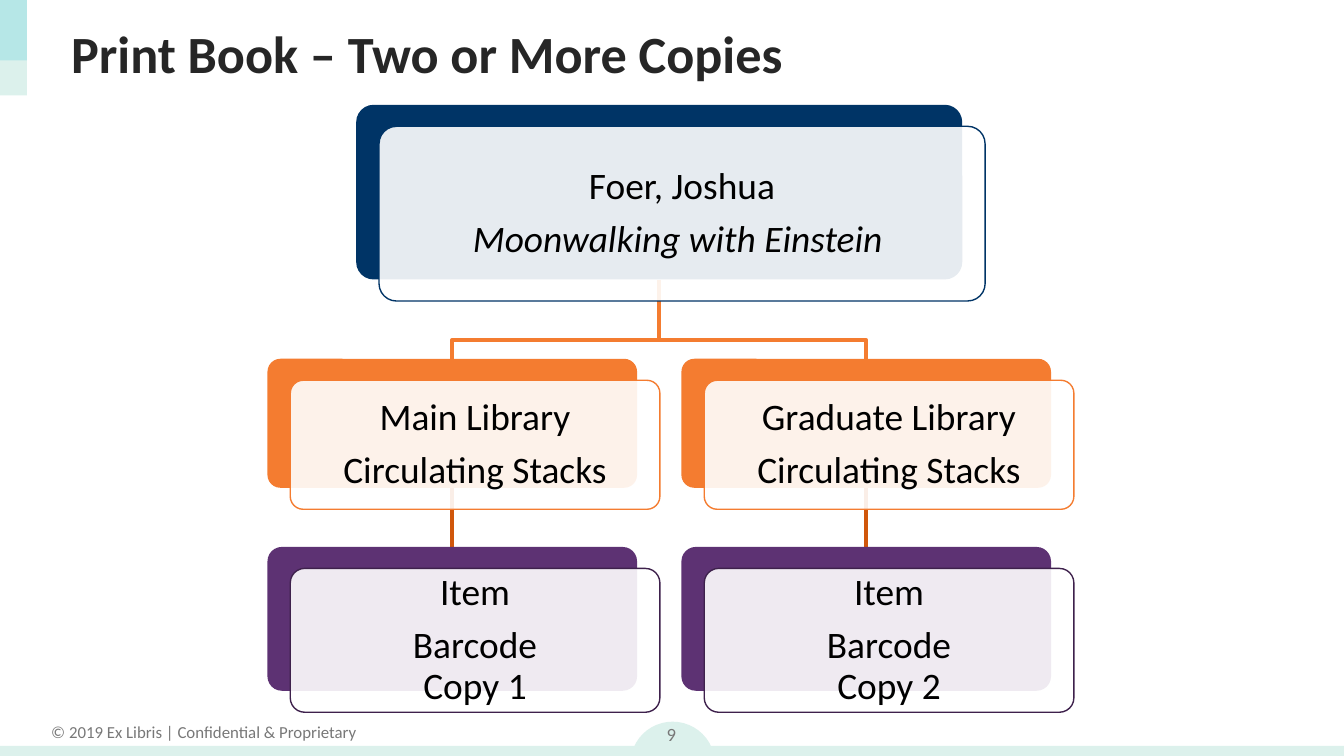
from dataclasses import dataclass

from lxml import etree
from pptx import Presentation
from pptx.dml.color import RGBColor
from pptx.enum import shapes as kinds, text as txt
from pptx.oxml import ns
from pptx.util import Inches, Pt


@dataclass(frozen=True)
class Theme:
    font: str = "Calibri"
    mint: str = "DCF1EC"
    aqua: str = "50CFDA"
    title: str = "262626"
    muted: str = "787878"
    ink: str = "000000"
    white: str = "FFFFFF"
    navy: str = "003466"
    orange: str = "F47C30"
    rust: str = "D0570B"
    purple: str = "5D3273"
    plum: str = "3E214C"
    title_size: int = 28
    card_size: int = 20
    number_size: int = 10
    footer_size: int = 9


THEME = Theme()
SLIDE_WIDTH = 10
SLIDE_HEIGHT = SLIDE_WIDTH * 9 / 16
CARD_SHIFT = (0.17, 0.16)  # front panel relative to its coloured back
CARD_WIDTH = 2.75
COLUMN_LEFT, COLUMN_STEP = 1.99, 3.08
RECORD = (2.65, 0.78, 4.51, 1.3)
HOLDING_TOP, HOLDING_HEIGHT = 2.67, 0.96
ITEM_TOP, ITEM_HEIGHT = 4.07, 1.07
BRANCH_Y = 2.53

# Each column: holding lines, item lines
COLUMNS = [
    (["Main Library", "Circulating Stacks"], ["Item", "Barcode\nCopy 1"]),
    (["Graduate Library", "Circulating Stacks"], ["Item", "Barcode\nCopy 2"]),
]


def rgb(value):
    return RGBColor.from_string(value)


def add_run(paragraph, words, size, color, bold=False, italic=False):
    run = paragraph.add_run()
    run.text = words
    font = run.font
    font.name, font.size, font.color.rgb = THEME.font, Pt(size), rgb(color)
    font.bold, font.italic = bold, italic


def add_block(slide, kind, box, fill, opacity=100, outline=None):
    block = slide.shapes.add_shape(kind, *map(Inches, box))
    block.shadow.inherit = False
    block.fill.solid()
    block.fill.fore_color.rgb = rgb(fill)
    if opacity < 100:
        color = block._element.spPr.find(
            ns.qn("a:solidFill") + "/" + ns.qn("a:srgbClr"))
        etree.SubElement(color, ns.qn("a:alpha"), val=str(opacity * 1000))
    if outline:
        block.line.color.rgb = rgb(outline)
        block.line.width = Pt(0.75)
    else:
        block.line.fill.background()
    return block


def add_label(slide, box, words, size, wrap, anchor):
    frame = slide.shapes.add_textbox(*map(Inches, box)).text_frame
    frame.word_wrap, frame.vertical_anchor = wrap, anchor
    paragraph = frame.paragraphs[0]
    paragraph.alignment = txt.PP_ALIGN.CENTER
    add_run(paragraph, words, size, THEME.muted)


def add_card(slide, box, lines, fill, outline, italic_line=None):
    """Coloured back with a translucent, offset text panel; returns the back."""
    left, top, width, height = box
    rounded = kinds.MSO_SHAPE.ROUNDED_RECTANGLE
    back = add_block(slide, rounded, box, fill)
    panel_box = (left + CARD_SHIFT[0], top + CARD_SHIFT[1], width, height)
    panel = add_block(slide, rounded, panel_box, THEME.white, 90, outline)
    back.adjustments[0] = panel.adjustments[0] = 0.1

    frame = panel.text_frame
    frame.word_wrap, frame.vertical_anchor = True, txt.MSO_ANCHOR.MIDDLE
    frame.margin_left = frame.margin_right = Inches(0.08)
    frame.margin_top = frame.margin_bottom = Inches(0.08)
    for index, line in enumerate(lines):
        paragraph = frame.add_paragraph() if index else frame.paragraphs[0]
        paragraph.alignment = txt.PP_ALIGN.CENTER
        paragraph.line_spacing, paragraph.space_after = 0.9, Pt(7)
        for part_index, part in enumerate(line.split("\n")):
            if part_index:
                paragraph.add_line_break()
            add_run(paragraph, part, THEME.card_size, THEME.ink,
                    italic=index == italic_line)
    return back


def add_branch(slide, points):
    start, *rest = [(Inches(x), Inches(y)) for x, y in points]
    builder = slide.shapes.build_freeform(*start)
    builder.add_line_segments(rest, close=False)
    branch = builder.convert_to_shape()
    branch.shadow.inherit = False
    branch.fill.background()
    branch.line.color.rgb = rgb(THEME.orange)
    branch.line.width = Pt(2)


def add_link(slide, x, top, bottom):
    link = slide.shapes.add_connector(
        kinds.MSO_CONNECTOR.STRAIGHT, *map(Inches, (x, top, x, bottom)))
    link.line.color.rgb = rgb(THEME.rust)
    link.line.width = Pt(2)
    etree.SubElement(link._element.spPr, ns.qn("a:effectLst"))
    return link


def add_frame(slide):
    oval, rect = kinds.MSO_SHAPE.OVAL, kinds.MSO_SHAPE.RECTANGLE
    add_block(slide, oval, (4.69, 5.37, 0.63, 0.63), THEME.mint)
    add_label(slide, (0.27, 5.32, 2.49, 0.25),
              "© 2019 Ex Libris | Confidential & Proprietary",
              THEME.footer_size, False, txt.MSO_ANCHOR.TOP)
    add_block(slide, rect, (0, 5.55, 10, 0.11), THEME.mint)
    add_block(slide, rect, (0, 0, 0.2, 0.71), THEME.mint)
    add_block(slide, rect, (0, 0, 0.2, 0.45), THEME.aqua, 27)
    add_label(slide, (4.7, 5.26, 0.59, 0.4), "9",
              THEME.number_size, True, txt.MSO_ANCHOR.MIDDLE)


def add_title(slide, words):
    title = slide.shapes.title
    title.left, title.top, title.width, title.height = map(
        Inches, (0.43, 0.08, 9.21, 0.63))
    title.text_frame.vertical_anchor = txt.MSO_ANCHOR.MIDDLE
    paragraph = title.text_frame.paragraphs[0]
    paragraph.alignment = txt.PP_ALIGN.LEFT
    add_run(paragraph, words, THEME.title_size, THEME.title, bold=True)


def add_tree(slide):
    lefts = [COLUMN_LEFT + i * COLUMN_STEP for i in range(len(COLUMNS))]
    centers = [left + CARD_WIDTH / 2 for left in lefts]
    record_x = RECORD[0] + RECORD[2] / 2
    record_bottom = RECORD[1] + RECORD[3]

    # Lines lie behind the cards
    links = []
    for x in centers:
        add_branch(slide, [(record_x, record_bottom), (record_x, BRANCH_Y),
                           (x, BRANCH_Y), (x, HOLDING_TOP)])
        links.append(add_link(slide, x, HOLDING_TOP + HOLDING_HEIGHT, ITEM_TOP))

    # Bibliographic record, then holdings and items by column
    add_card(slide, RECORD, ["Foer, Joshua", "Moonwalking with Einstein "],
             THEME.navy, THEME.navy, italic_line=1)
    for left, link, (holding_lines, item_lines) in zip(lefts, links, COLUMNS):
        holding = add_card(
            slide, (left, HOLDING_TOP, CARD_WIDTH, HOLDING_HEIGHT),
            holding_lines, THEME.orange, THEME.orange)
        item = add_card(
            slide, (left, ITEM_TOP, CARD_WIDTH, ITEM_HEIGHT),
            item_lines, THEME.purple, THEME.plum)
        link.begin_connect(holding, 2)
        link.end_connect(item, 0)


def main():
    deck = Presentation()
    deck.slide_width, deck.slide_height = Inches(SLIDE_WIDTH), Inches(SLIDE_HEIGHT)
    slide = deck.slides.add_slide(deck.slide_layouts[5])
    add_frame(slide)
    add_title(slide, "Print Book – Two or More Copies")
    add_tree(slide)
    deck.save("out.pptx")


if __name__ == "__main__":
    main()
